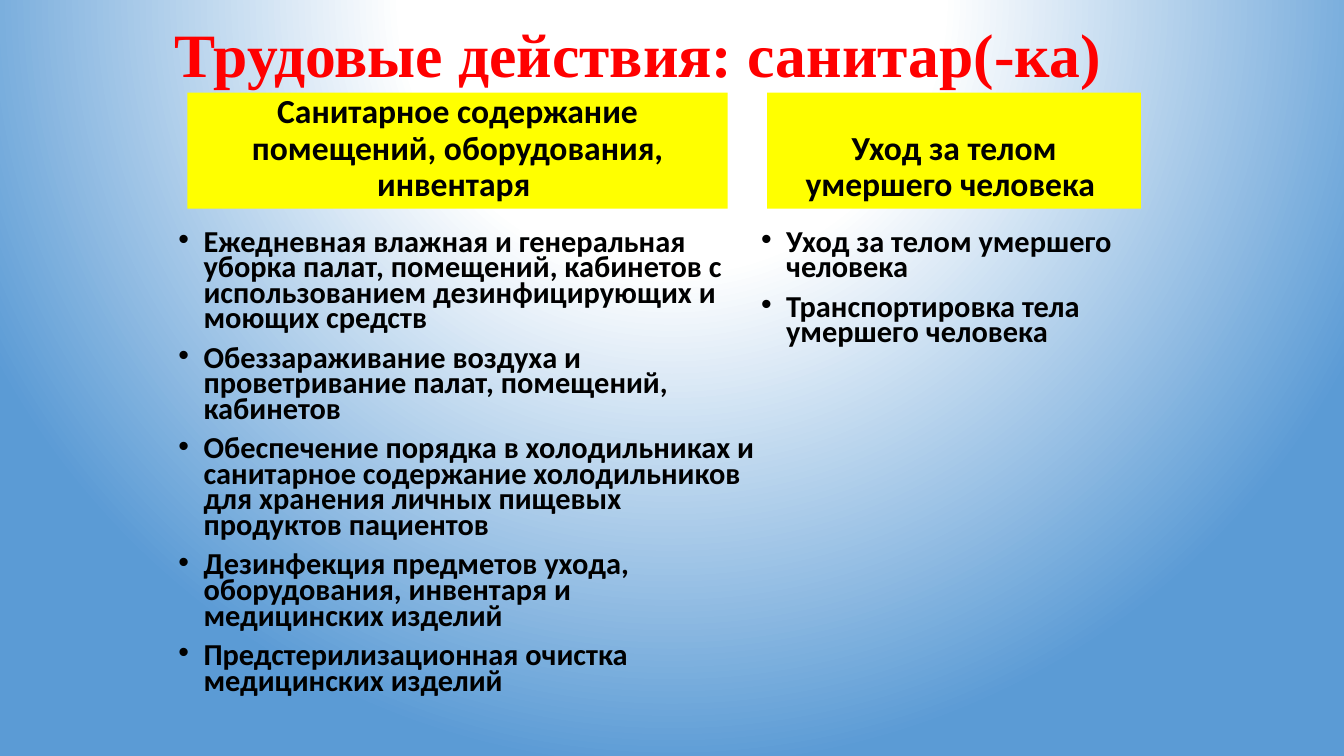
from dataclasses import dataclass

from lxml import etree
from pptx import Presentation
from pptx.dml.color import RGBColor
from pptx.enum import text
from pptx.oxml import parse_xml
from pptx.oxml.ns import nsdecls, qn
from pptx.util import Pt

TITLE = "Трудовые действия: санитар(-ка) "
TITLE_BOX = (0, 0, 923, 82.8)

# Each box is left, top, width, height in points.
COLUMNS = [
    {
        "heading": "Санитарное содержание помещений, оборудования, инвентаря ",
        "heading_box": (133.9, 66.2, 385.9, 82.8),
        "duties": [
            "Ежедневная влажная и генеральная уборка палат, помещений, кабинетов "
            "с использованием дезинфицирующих и моющих средств",
            "Обеззараживание воздуха и проветривание палат, помещений, кабинетов",
            "Обеспечение порядка в холодильниках и санитарное содержание "
            "холодильников для хранения личных пищевых продуктов пациентов",
            "Дезинфекция предметов ухода, оборудования, инвентаря и медицинских изделий",
            "Предстерилизационная очистка медицинских изделий",
        ],
        "duties_box": (120.2, 162, 427.7, 378),
    },
    {
        "heading": "Уход за телом умершего человека ",
        "heading_box": (547.9, 66.2, 267.1, 82.8),
        "duties": [
            "Уход за телом умершего человека",
            "Транспортировка тела умершего человека",
        ],
        "duties_box": (536.4, 162, 267.1, 346.3),
    },
]


@dataclass(frozen=True)
class Theme:
    title_font: str = "Times New Roman"
    body_font: str = "Calibri"
    title_size: float = 44
    heading_size: float = 24
    duty_size: float = 21.7
    title_color: str = "FF0000"
    text_color: str = "000000"
    heading_fill: str = "FFFF00"
    glow: str = "FFFFFF"
    edge: str = "5B9BD5"
    bullet_indent: float = 18
    paragraph_gap: float = 10


theme = Theme()


def paint_background(slide):
    """Radial gradient centred above the slide."""
    stops = "".join(
        f'<a:gs pos="{percent * 1000}"><a:srgbClr val="{color}"/></a:gs>'
        for percent, color in [(0, theme.glow), (35, theme.glow), (100, theme.edge)]
    )
    slide.element.cSld.insert(0, parse_xml(
        f'<p:bg {nsdecls("p", "a")}><p:bgPr><a:gradFill rotWithShape="1">'
        f"<a:gsLst>{stops}</a:gsLst>"
        '<a:path path="circle">'
        '<a:fillToRect l="50000" t="-80000" r="50000" b="180000"/></a:path>'
        "</a:gradFill><a:effectLst/></p:bgPr></p:bg>"
    ))


def fill_placeholder(holder, box, lines, anchor, align, spacing, gap, font, size, color):
    holder.left, holder.top, holder.width, holder.height = map(Pt, box)
    frame = holder.text_frame
    frame.text = "\n".join(lines)
    frame.word_wrap = True
    frame.auto_size = text.MSO_AUTO_SIZE.NONE
    frame.vertical_anchor = anchor
    for paragraph in frame.paragraphs:
        paragraph.alignment = align
        paragraph.line_spacing = spacing
        paragraph.space_before = Pt(gap)
        for run in paragraph.runs:
            run.font.name = font
            run.font.size = Pt(size)
            run.font.bold = True
            run.font.color.rgb = RGBColor.from_string(color)


def add_bullet(paragraph):
    properties = paragraph._p.get_or_add_pPr()
    indent = Pt(theme.bullet_indent)
    properties.set("marL", str(indent))
    properties.set("indent", str(-indent))
    etree.SubElement(properties, qn("a:buFont")).set("typeface", "Arial")
    etree.SubElement(properties, qn("a:buChar")).set("char", "•")


def main():
    deck = Presentation()
    deck.slide_width, deck.slide_height = Pt(960), Pt(540)
    slide = deck.slides.add_slide(deck.slide_layouts.get_by_name("Comparison"))
    paint_background(slide)

    title, *bodies = slide.placeholders
    fill_placeholder(title, TITLE_BOX, [TITLE], text.MSO_ANCHOR.MIDDLE,
                     text.PP_ALIGN.CENTER, 0.9, 0, theme.title_font,
                     theme.title_size, theme.title_color)

    for column, heading, duties in zip(COLUMNS, bodies[::2], bodies[1::2]):
        fill_placeholder(heading, column["heading_box"], [column["heading"]],
                         text.MSO_ANCHOR.BOTTOM, text.PP_ALIGN.CENTER, 0.9,
                         theme.paragraph_gap, theme.body_font,
                         theme.heading_size, theme.text_color)
        heading.fill.solid()
        heading.fill.fore_color.rgb = RGBColor.from_string(theme.heading_fill)

        fill_placeholder(duties, column["duties_box"], column["duties"],
                         text.MSO_ANCHOR.TOP, text.PP_ALIGN.LEFT, 0.7,
                         theme.paragraph_gap, theme.body_font,
                         theme.duty_size, theme.text_color)
        for paragraph in duties.text_frame.paragraphs:
            add_bullet(paragraph)

    deck.save("out.pptx")


if __name__ == "__main__":
    main()
